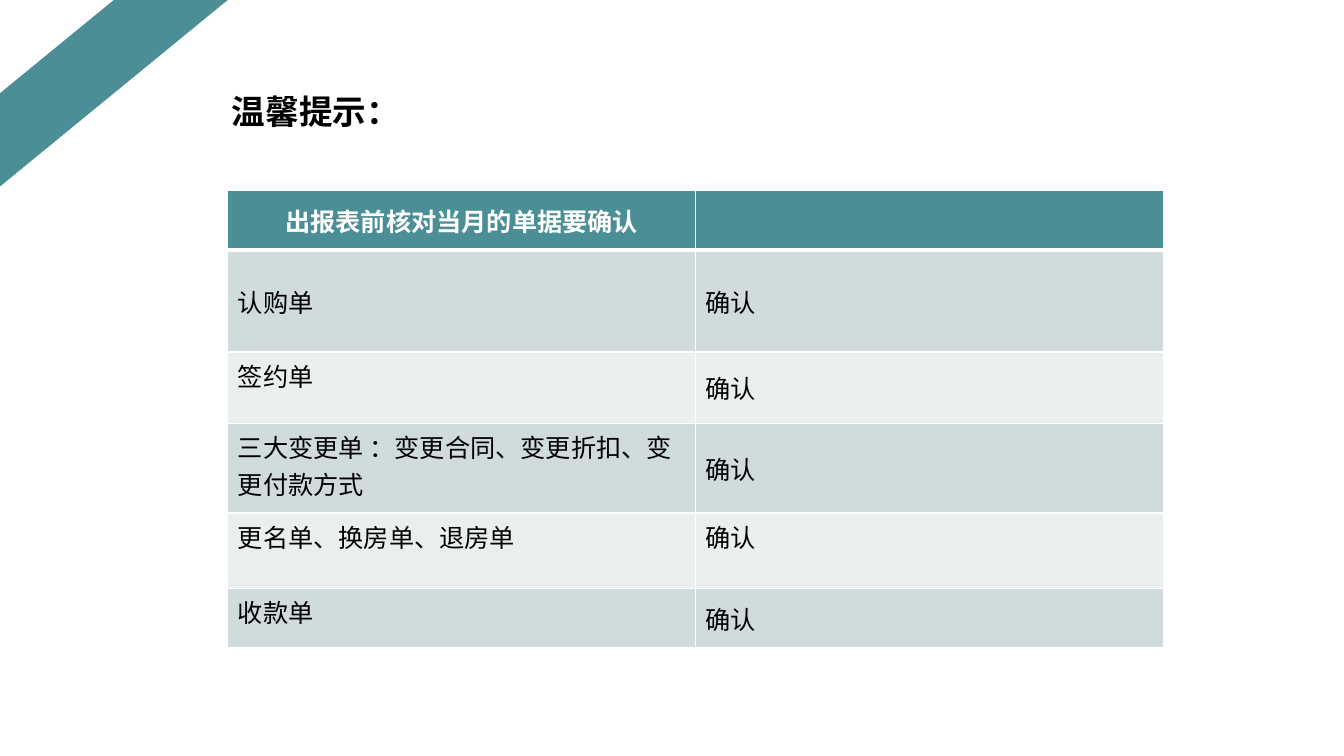
from lxml.etree import SubElement
from pptx import Presentation
from pptx.dml.color import RGBColor
from pptx.enum.shapes import MSO_SHAPE
from pptx.enum.text import MSO_ANCHOR, PP_ALIGN
from pptx.oxml.ns import qn
from pptx.util import Cm, Pt

COLORS = {
    "teal": "4B8E95",
    "band_dark": "D0DBDD",
    "band_light": "E9EEEF",
    "white": "FFFFFF",
    "black": "000000",
}


def format_run(run, size, color, bold):
    run.font.name = "Arial"
    run.font.size = Pt(size)
    run.font.bold = bold
    run.font.color.rgb = RGBColor.from_string(COLORS[color])


def add_border(cell, side, width):
    properties = cell._tc.get_or_add_tcPr()
    line = SubElement(properties, qn(f"a:ln{side}"), w=str(Pt(width)))
    fill = SubElement(line, qn("a:solidFill"))
    SubElement(fill, qn("a:srgbClr"), val=COLORS["white"])


presentation = Presentation()
presentation.slide_width = Cm(33.87)
presentation.slide_height = Cm(19.05)
slide = presentation.slides.add_slide(presentation.slide_layouts[5])

stripe = slide.shapes.add_shape(MSO_SHAPE.DIAGONAL_STRIPE, 0, 0, Cm(5.74), Cm(4.7))
stripe.shadow.inherit = False
stripe.fill.solid()
stripe.fill.fore_color.rgb = RGBColor.from_string(COLORS["teal"])
stripe.line.fill.background()

title = slide.shapes.title
title.left, title.top, title.width, title.height = Cm(5.59), Cm(2.16), Cm(9.8), Cm(1.27)
title.text_frame.text = "温馨提示："
title.text_frame.vertical_anchor = MSO_ANCHOR.MIDDLE
title_paragraph = title.text_frame.paragraphs[0]
title_paragraph.alignment = PP_ALIGN.LEFT
format_run(title_paragraph.runs[0], 24, "black", True)

TOP, MIDDLE = MSO_ANCHOR.TOP, MSO_ANCHOR.MIDDLE
rows = [
    (1.5, "出报表前核对当月的单据要确认", MIDDLE, "", MIDDLE),
    (2.57, "认购单", MIDDLE, "确认", MIDDLE),
    (1.8, "签约单", TOP, "确认", MIDDLE),
    (2.26, "三大变更单 ：变更合同、变更折扣、变更付款方式", TOP, "确认", MIDDLE),
    (1.9, "更名单、换房单、退房单", TOP, "确认", TOP),
    (1.5, "收款单", TOP, "确认", MIDDLE),
]
column_width = 11.79
table_height = sum(row[0] for row in rows)
table = slide.shapes.add_table(
    len(rows), 2, Cm(5.74), Cm(4.8), Cm(2 * column_width), Cm(table_height)
).table
for column in table.columns:
    column.width = Cm(column_width)

for row_index, (height, item, item_anchor, status, status_anchor) in enumerate(rows):
    table.rows[row_index].height = Cm(height)
    is_header = row_index == 0
    band = "teal" if is_header else ("band_light", "band_dark")[row_index % 2]
    for column_index, (text, anchor) in enumerate([(item, item_anchor), (status, status_anchor)]):
        cell = table.cell(row_index, column_index)
        cell.text_frame.text = text
        cell.vertical_anchor = anchor
        paragraph = cell.text_frame.paragraphs[0]
        paragraph.alignment = PP_ALIGN.CENTER if is_header else PP_ALIGN.LEFT
        for run in paragraph.runs:
            format_run(run, 18, "white" if is_header else "black", is_header)
        add_border(cell, "L", 1)
        add_border(cell, "R", 1)
        add_border(cell, "T", 3 if row_index == 1 else 1)
        add_border(cell, "B", 3 if is_header else 1)
        cell.fill.solid()
        cell.fill.fore_color.rgb = RGBColor.from_string(COLORS[band])

presentation.save("out.pptx")
